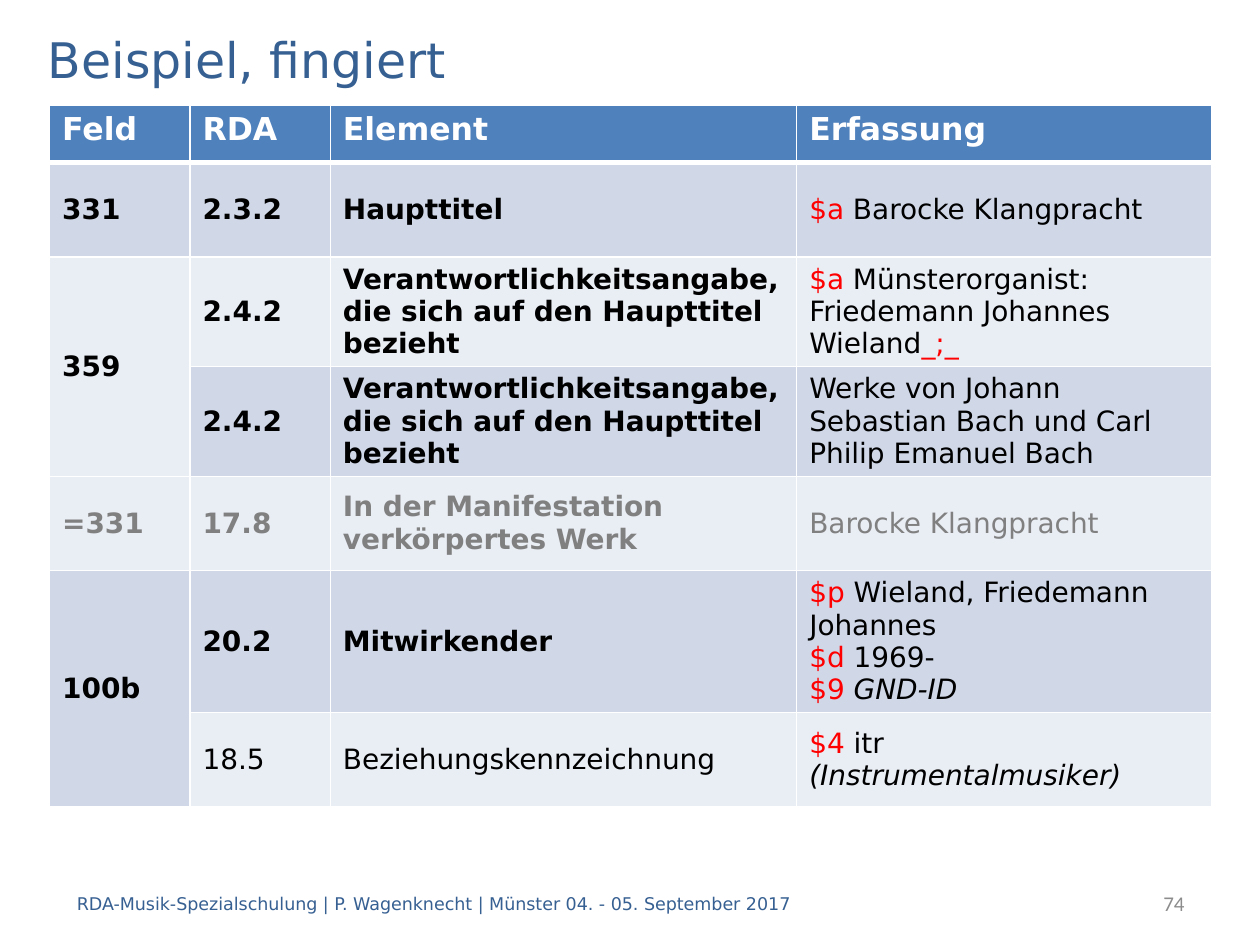
"""Build the cataloguing example slide with its field table."""
from pptx import Presentation
from pptx.dml.color import RGBColor as Rgb
from pptx.enum.text import MSO_ANCHOR as Anchor, PP_ALIGN as Align
from pptx.oxml import parse_xml
from pptx.oxml.ns import nsdecls
from pptx.util import Cm, Pt

HUES = {
    "head": "4F81BD", "dark": "D0D8E8", "light": "E9EDF4", "white": "FFFFFF",
    "black": "000000", "red": "FF0000", "grey": "808080", "navy": "376092", "pale": "8C8C8C",
}


def add_run(para, text, hue, size, bold=False, italic=False, face="DejaVu Sans"):
    run = para.add_run()
    run.text = text
    font = run.font
    font.name, font.size, font.bold, font.italic = face, Pt(size), bold, italic
    font.color.rgb = Rgb.from_string(HUES[hue])


def add_note(left, width, text, hue, size, align, face):
    box = slide.shapes.add_textbox(Cm(left), Cm(17.7), Cm(width), Cm(1.02))
    frame = box.text_frame
    frame.word_wrap = True
    frame.vertical_anchor = Anchor.MIDDLE
    para = frame.paragraphs[0]
    para.alignment = align
    add_run(para, text, hue, size, face=face)


deck = Presentation()
deck.slide_width, deck.slide_height = Cm(25.4), Cm(19.05)
slide = deck.slides.add_slide(deck.slide_layouts[5])

title = slide.shapes.title
title.left, title.top, title.width, title.height = Cm(0.71), Cm(0.48), Cm(24), Cm(1.42)
title.text_frame.vertical_anchor = Anchor.MIDDLE
para = title.text_frame.paragraphs[0]
para.alignment = Align.LEFT
add_run(para, "Beispiel, fingiert", "navy", 28)

heads = ["Feld", "RDA", "Element", "Erfassung"]
claim = "Verantwortlichkeitsangabe, die sich auf den Haupttitel bezieht"
rows = [
    ("331", "2.3.2", "Haupttitel", [[("$a", "red"), (" Barocke Klangpracht", "black")]]),
    ("359", "2.4.2", claim, [[
        ("$a", "red"),
        (" Münsterorganist: Friedemann Johannes Wieland", "black"),
        ("_;_", "red"),
    ]]),
    ("", "2.4.2", claim, [[
        ("Werke von Johann Sebastian Bach und Carl Philip Emanuel Bach", "black"),
    ]]),
    ("=331", "17.8", "In der Manifestation verkörpertes Werk", [[("Barocke Klangpracht", "grey")]]),
    ("100b", "20.2", "Mitwirkender", [
        [("$p", "red"), (" Wieland, Friedemann Johannes", "black")],
        [("$d", "red"), (" 1969-", "black")],
        [("$9 ", "red"), ("GND-ID", "black", True)],
    ]),
    ("", "18.5", "Beziehungskennzeichnung", [[
        ("$4 ", "red"), ("itr ", "black"), ("(Instrumentalmusiker)", "black", True),
    ]]),
]

frame = slide.shapes.add_table(len(rows) + 1, len(heads), Cm(1), Cm(2.12), Cm(23.42), Cm(12.57))
table = frame.table
for col, width in zip(table.columns, [2.83, 2.83, 9.4, 8.36]):
    col.width = Cm(width)
for num, row in enumerate(table.rows):
    row.height = Cm(1.9 if num else 1.16)
    for cell in row.cells:
        cell.fill.solid()
        band = ("dark" if num % 2 else "light") if num else "head"
        cell.fill.fore_color.rgb = Rgb.from_string(HUES[band])
        cell.vertical_anchor = Anchor.MIDDLE if num else Anchor.TOP
for top in (2, 5):
    table.cell(top, 0).merge(table.cell(top + 1, 0))

for col, head in enumerate(heads):
    cell = table.cell(0, col)
    add_run(cell.text_frame.paragraphs[0], head, "white", 18, bold=True)
    rule = parse_xml(
        f'<a:lnB {nsdecls("a")} w="{Pt(3)}"><a:solidFill>'
        f'<a:srgbClr val="{HUES["white"]}"/></a:solidFill></a:lnB>'
    )
    cell._tc.get_or_add_tcPr().insert(0, rule)
for num, (*keys, entry) in enumerate(rows, 1):
    hue = "grey" if keys[0] == "=331" else "black"
    bold = keys[1] != "18.5"
    for col, key in enumerate(keys):
        if key:
            para = table.cell(num, col).text_frame.paragraphs[0]
            para.space_before = para.space_after = Pt(6)
            add_run(para, key, hue, 16, bold)
    text = table.cell(num, 3).text_frame
    for pos, parts in enumerate(entry):
        para = text.add_paragraph() if pos else text.paragraphs[0]
        if len(entry) == 1:
            para.space_before = para.space_after = Pt(6)
        for words, tint, *slant in parts:
            add_run(para, words, tint, 16, italic=bool(slant))

add_note(20.09, 4.04, "74", "pale", 12, Align.RIGHT, "Calibri")
add_note(1.3, 16.99, "RDA-Musik-Spezialschulung | P. Wagenknecht | Münster 04. - 05. September 2017",
         "navy", 10, Align.LEFT, "DejaVu Sans")

deck.save("out.pptx")
